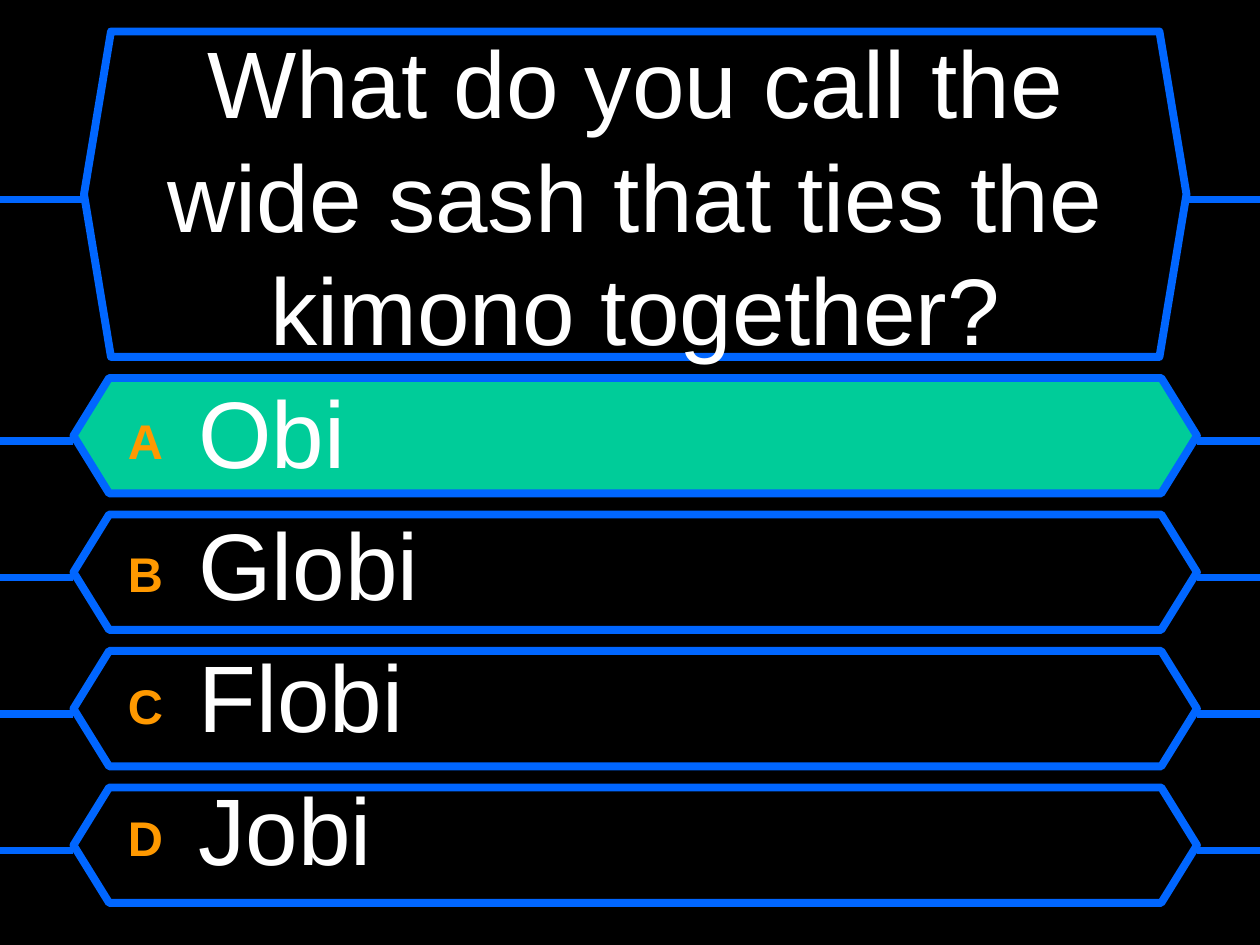
import pptx
import pptx.util
import pptx.dml.color
import pptx.enum.shapes
import pptx.enum.text
from pptx.oxml.ns import qn
from lxml import etree

COLORS = {
    "background": "000000",
    "frame": "0066FF",
    "correct": "00CC99",
    "letter": "FF9900",
    "text": "FFFFFF",
}
FONT = "Arial"
WIDTH, HEIGHT = 10, 7.5
ROW = HEIGHT / 90
FRAME_WIDTH = 4.5
QUESTION = "What do you call the wide sash that ties the kimono together?"
ANSWERS = ["Obi", "Globi", "Flobi", "Jobi"]
CORRECT = 0


def rgb(name):
    """Return the named colour."""
    return pptx.dml.color.RGBColor.from_string(COLORS[name])


def inches(*lengths):
    """Convert lengths in inches to slide units."""
    return [pptx.util.Inches(length) for length in lengths]


def add_wire(slide, start, end, y):
    """Draw a horizontal wire between two positions."""
    wire = slide.shapes.add_connector(
        pptx.enum.shapes.MSO_CONNECTOR.STRAIGHT, *inches(start, y, end, y))
    wire.line.color.rgb = rgb("frame")
    wire.line.width = pptx.util.Pt(FRAME_WIDTH)
    etree.SubElement(wire._element.spPr, qn("a:effectLst"))


def add_frame(slide, box, point, wire_y, fill):
    """Draw a hexagonal frame with wires to both slide edges."""
    left, top, width, height = box
    frame = slide.shapes.add_shape(
        pptx.enum.shapes.MSO_SHAPE.HEXAGON, *inches(*box))
    frame.adjustments[0] = point
    frame.shadow.inherit = False
    frame.fill.solid()
    frame.fill.fore_color.rgb = rgb(fill)
    frame.line.color.rgb = rgb("frame")
    frame.line.width = pptx.util.Pt(FRAME_WIDTH)
    add_wire(slide, left, 0, wire_y)
    add_wire(slide, WIDTH, left + width, wire_y)


def add_text_frame(slide, box):
    """Add a wrapping text box and return its text frame."""
    frame = slide.shapes.add_textbox(*inches(*box)).text_frame
    frame.word_wrap = True
    return frame


def add_run(paragraph, text, size, color, bold=False):
    """Append a styled run to a paragraph."""
    run = paragraph.add_run()
    run.text = text
    run.font.name = FONT
    run.font.size = pptx.util.Pt(size)
    run.font.bold = bold
    run.font.color.rgb = rgb(color)
    return run


def add_question(slide, box):
    """Place the framed question in its box."""
    left, top, width, height = box
    add_frame(slide, box, 0.083, top + 16 * ROW, "background")
    question = add_text_frame(
        slide, (left + 2 * ROW, top + 2 * ROW, width - 4 * ROW, height - 4 * ROW))
    question.vertical_anchor = pptx.enum.text.MSO_ANCHOR.MIDDLE
    paragraph = question.paragraphs[0]
    paragraph.alignment = pptx.enum.text.PP_ALIGN.CENTER
    add_run(paragraph, QUESTION, 54, "text")


def add_answer(paragraph, letter, answer):
    """Write a raised letter and its answer on a hanging indent."""
    properties = paragraph._p.get_or_add_pPr()
    indent = pptx.util.Inches(0.56)
    properties.set("marL", str(indent))
    properties.set("indent", str(-indent))
    spacing = etree.SubElement(properties, qn("a:spcBef"))
    etree.SubElement(spacing, qn("a:spcPct")).set("val", "20000")
    label = add_run(paragraph, letter, 48, "letter", bold=True)
    label.font._element.set("baseline", "10000")
    add_run(paragraph, "\t" + answer, 54, "text")


def add_answers(slide, box):
    """Place the answer frames and their list in the box."""
    left, top, width, height = box
    frame_height = 11 * ROW
    pitch = (height - frame_height) / (len(ANSWERS) - 1)
    for index in range(len(ANSWERS)):
        y = top + index * pitch
        fill = "correct" if index == CORRECT else "background"
        add_frame(slide, (left, y, width, frame_height), 0.309, y + 6 * ROW, fill)
    answers = add_text_frame(
        slide, (left + 4 * ROW, top - ROW, width - 7 * ROW, height + 2 * ROW))
    for index, answer in enumerate(ANSWERS):
        paragraph = answers.add_paragraph() if index else answers.paragraphs[0]
        add_answer(paragraph, "ABCD"[index], answer)


def main():
    """Build and save the quiz slide."""
    deck = pptx.Presentation()
    deck.slide_width, deck.slide_height = inches(WIDTH, HEIGHT)
    slide = deck.slides.add_slide(deck.slide_layouts[6])
    slide.background.fill.solid()
    slide.background.fill.fore_color.rgb = rgb("background")
    add_question(slide, (8 * ROW, 3 * ROW, 105 * ROW, 31 * ROW))
    add_answers(slide, (7 * ROW, 36 * ROW, 107 * ROW, 50 * ROW))
    deck.save("out.pptx")


if __name__ == "__main__":
    main()
